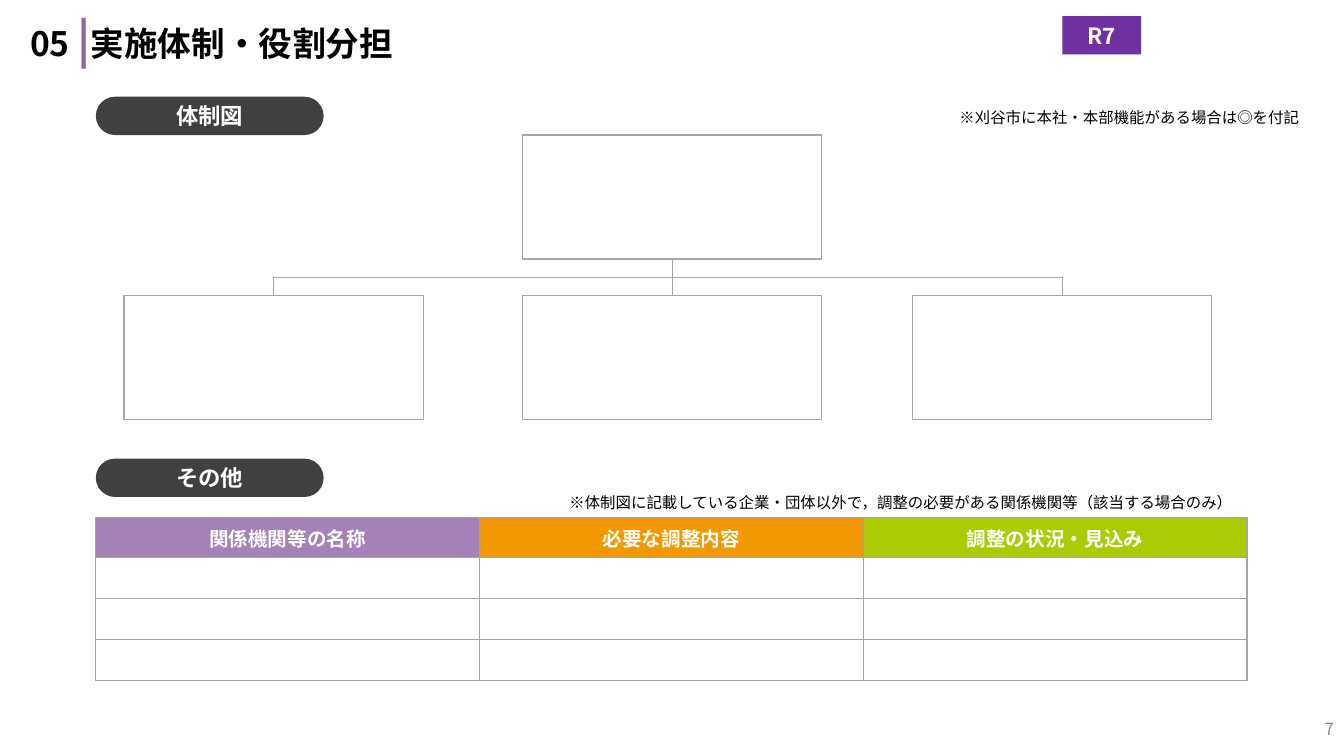
import pptx
import pptx.util
import pptx.dml.color
import pptx.oxml
import pptx.oxml.ns
import pptx.enum.shapes
import pptx.enum.text
from lxml import etree

FONT = "Noto Sans CJK JP"
COLORS = {
    "black": "000000", "white": "FFFFFF", "label": "404040", "bar": "9065A9",
    "tag": "7030A0", "line": "A6A6A6", "border": "A5A5A5", "page": "8C8C8C",
    "purple": "A481B9", "orange": "F29800", "green": "AACC04",
}
ALIGN = pptx.enum.text.PP_ALIGN
ANCHOR = pptx.enum.text.MSO_ANCHOR
SHAPE = pptx.enum.shapes.MSO_SHAPE
CONNECTOR = pptx.enum.shapes.MSO_CONNECTOR
qn = pptx.oxml.ns.qn


def rgb(name):
    return pptx.dml.color.RGBColor.from_string(COLORS[name])


def add_text(paragraph, text, size=14, color="black", bold=False, align=None,
             line_spacing=None, space_after=None):
    """Add one run to a paragraph and format both."""
    if align is not None:
        paragraph.alignment = align
    if line_spacing:
        paragraph.line_spacing = line_spacing
    if space_after:
        paragraph.space_after = pptx.util.Pt(space_after)
    run = paragraph.add_run()
    run.text = text
    run.font.size = pptx.util.Pt(size)
    run.font.bold = bold
    run.font.color.rgb = rgb(color)
    run.font.name = FONT
    etree.SubElement(run.font._element, qn("a:ea"), typeface=FONT)


class SlideBuilder:
    """Places elements on a slide; all lengths are percent of its size."""

    def __init__(self, presentation):
        self.width = presentation.slide_width
        self.height = presentation.slide_height
        self.slide = presentation.slides.add_slide(presentation.slide_layouts[6])
        self.shapes = self.slide.shapes

    def place(self, left, top, width, height):
        return (round(self.width * left / 100), round(self.height * top / 100),
                round(self.width * width / 100), round(self.height * height / 100))

    def text(self, area, runs, anchor=ANCHOR.MIDDLE, **style):
        box = self.shapes.add_textbox(*self.place(*area))
        box.text_frame.word_wrap = True
        box.text_frame.vertical_anchor = anchor
        for text, run_style in runs:
            add_text(box.text_frame.paragraphs[0], text, **run_style, **style)

    def note(self, area, text, align=ALIGN.LEFT):
        self.text(area, [(text, {})], anchor=ANCHOR.TOP, size=11, align=align,
                  line_spacing=1.2, space_after=6)

    def label(self, area, text, fill, rounding):
        shape = self.shapes.add_shape(SHAPE.ROUNDED_RECTANGLE, *self.place(*area))
        shape.adjustments[0] = rounding
        shape.shadow.inherit = False
        shape.fill.solid()
        shape.fill.fore_color.rgb = rgb(fill)
        shape.line.fill.background()
        shape.text_frame.vertical_anchor = ANCHOR.MIDDLE
        add_text(shape.text_frame.paragraphs[0], text, size=16, color="white",
                 bold=True, align=ALIGN.CENTER)

    def box(self, area):
        shape = self.shapes.add_shape(SHAPE.RECTANGLE, *self.place(*area))
        shape.shadow.inherit = False
        shape.fill.background()
        shape.line.color.rgb = rgb("line")
        shape.line.width = pptx.util.Pt(1)
        return shape

    def branch(self, parent, child):
        """Join the parent's bottom to the child's top, straight or bent."""
        offset = (child.left + child.width // 2) - (parent.left + parent.width // 2)
        bent = abs(offset) > self.width // 100
        kind = CONNECTOR.ELBOW if bent else CONNECTOR.STRAIGHT
        connector = self.shapes.add_connector(kind, 0, 0, 0, 0)
        connector.begin_connect(parent, 2)
        connector.end_connect(child, 0)
        connector.line.color.rgb = rgb("line")
        connector.line.width = pptx.util.Pt(0.5)
        properties = connector._element.spPr
        etree.SubElement(properties, qn("a:effectLst"))
        if bent:
            # A quarter turn makes the connector leave downwards
            drop = child.top - parent.top - parent.height
            span = abs(offset)
            center = parent.left + parent.width // 2 + offset // 2
            middle = parent.top + parent.height + drop // 2
            connector.left, connector.top = center - drop // 2, middle - span // 2
            connector.width, connector.height = drop, span
            frame = properties.find(qn("a:xfrm"))
            frame.set("rot", "5400000" if offset < 0 else "16200000")
            frame.set("flipH", "0" if offset < 0 else "1")
            frame.set("flipV", "0")

    def table(self, area, headers, row_count):
        place = self.place(*area)
        table = self.shapes.add_table(row_count, len(headers), *place).table
        table.first_row = table.horz_banding = False
        for row in range(row_count):
            for column, (text, fill) in enumerate(headers):
                cell = table.cell(row, column)
                cell.vertical_anchor = ANCHOR.MIDDLE
                paragraph = cell.text_frame.paragraphs[0]
                if row == 0:
                    cell.fill.solid()
                    cell.fill.fore_color.rgb = rgb(fill)
                    add_text(paragraph, text, color="white", bold=True,
                             align=ALIGN.CENTER)
                else:
                    cell.fill.background()
                    paragraph._p.get_or_add_endParaRPr().set("sz", "1400")
                self.borders(cell)

    def borders(self, cell):
        properties = cell._tc.get_or_add_tcPr()
        for index, side in enumerate(("lnL", "lnR", "lnT", "lnB")):
            line = etree.Element(qn("a:" + side), w=str(pptx.util.Pt(1)))
            fill = etree.SubElement(line, qn("a:solidFill"))
            etree.SubElement(fill, qn("a:srgbClr"), val=COLORS["border"])
            properties.insert(index, line)


def main():
    presentation = pptx.Presentation()
    presentation.slide_width = pptx.util.Inches(13.33)
    presentation.slide_height = pptx.util.Inches(7.5)
    builder = SlideBuilder(presentation)

    # Title and tag
    builder.text((1.5, 1.2, 81.75, 8.8), [
        ("05 ", {"size": 24}),
        ("|", {"size": 32, "color": "bar"}),
        ("実施体制・役割分担", {"size": 24}),
    ], bold=True, line_spacing=0.9)
    builder.label((79.05, 2.13, 5.85, 5.07), "R7", "tag", 0)

    # Section labels
    for text, top in (("体制図", 12.8), ("その他", 60.67)):
        builder.label((7.13, top, 16.95, 5.07), text, "label", 0.5)

    # Organization chart
    box_width, box_height = 22.28, 16.4
    center_left = (100 - box_width) / 2
    parent = builder.box((center_left, 17.87, box_width, box_height))
    for left in (9.23, center_left, 67.88):
        child = builder.box((left, 39.07, box_width, box_height))
        builder.branch(parent, child)
    builder.note((70.2, 13.2, 27.23, 4.27),
                 "※刈谷市に本社・本部機能がある場合は◎を付記", ALIGN.RIGHT)

    # Coordination table
    builder.note((41.63, 64.13, 51.23, 4.27),
                 "※体制図に記載している企業・団体以外で，調整の必要がある関係機関等（該当する場合のみ）")
    builder.table((7.13, 68.4, 85.65, 21.6), [
        ("関係機関等の名称", "purple"),
        ("必要な調整内容", "orange"),
        ("調整の状況・見込み", "green"),
    ], row_count=4)

    # Page number
    builder.text((77.5, 94.8, 22.5, 3.33), [("7", {})], size=12, color="page",
                 align=ALIGN.RIGHT)

    presentation.save("out.pptx")


if __name__ == "__main__":
    main()
